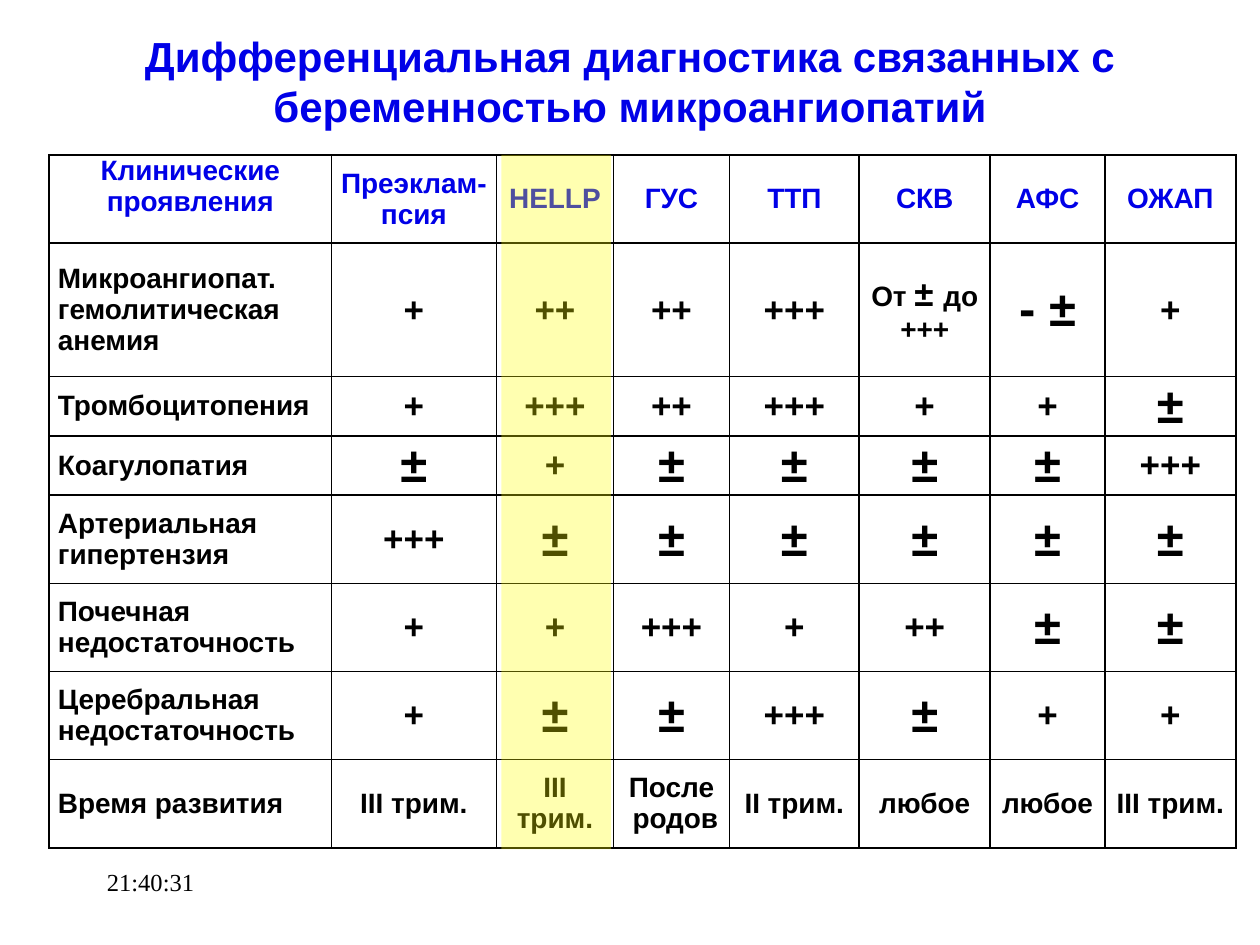
from lxml.etree import SubElement
from pptx import Presentation
from pptx.dml.color import RGBColor
from pptx.enum.shapes import MSO_SHAPE
from pptx.enum.text import MSO_ANCHOR, PP_ALIGN
from pptx.oxml.ns import qn
from pptx.util import Inches, Pt

BLUE = RGBColor(0x00, 0x00, 0xE7)
BLACK = RGBColor(0x00, 0x00, 0x00)
YELLOW = RGBColor(0xFF, 0xFF, 0x00)

TABLE_LEFT, TABLE_TOP = 0.39, 1.23
COLUMN_WIDTHS = [2.24, 1.31, 0.93, 0.92, 1.03, 1.04, 0.91, 1.04]
ROW_HEIGHTS = [0.7, 1.06, 0.47, 0.47, 0.7, 0.7, 0.7, 0.7]
ROWS = [
    ["Клинические проявления", "Преэклам-\nпсия", "HELLP", "ГУС", "ТТП", "СКВ", "АФС", "ОЖАП"],
    ["Микроангиопат.\nгемолитическая анемия", "+", "++", "++", "+++",
     [("От ", 16), ("± ", 20), ("до +++", 16)], "- ±", "+"],
    ["Тромбоцитопения", "+", "+++", "++", "+++", "+", "+", "±"],
    ["Коагулопатия", "±", "+", "±", "±", "±", "±", "+++"],
    ["Артериальная гипертензия", "+++", "±", "±", "±", "±", "±", "±"],
    ["Почечная недостаточность", "+", "+", "+++", "+", "++", "±", "±"],
    ["Церебральная недостаточность", "+", "±", "±", "+++", "±", "+", "+"],
    ["Время развития", "III трим.", "III трим.", "После\n родов", "II трим.",
     "любое", "любое", "III трим."],
]


def write_text(frame, text, size=16, color=BLACK, bold=True, font="Arial",
               align=PP_ALIGN.CENTER):
    """Fill a frame with text, or with (text, size) runs; a newline starts a paragraph."""
    lines = [[(line, size)] for line in text.split("\n")] if isinstance(text, str) else [text]
    for index, line in enumerate(lines):
        paragraph = frame.add_paragraph() if index else frame.paragraphs[0]
        paragraph.alignment = align
        for part, part_size in line:
            run = paragraph.add_run()
            run.text = part
            run.font.size = Pt(part_size)
            run.font.name = font
            run.font.bold = bold
            run.font.color.rgb = color


def add_text_box(slide, text, left, top, width, height, anchor=MSO_ANCHOR.TOP, **text_format):
    box = slide.shapes.add_textbox(Inches(left), Inches(top), Inches(width), Inches(height))
    box.text_frame.word_wrap = True
    box.text_frame.vertical_anchor = anchor
    write_text(box.text_frame, text, **text_format)


def sign_size(text):
    """Size of a cell's text: plus-minus signs largest, then pluses, then words."""
    if text in ("±", "- ±"):
        return 28
    return 20 if set(text) == {"+"} else 16


def set_borders(cell):
    properties = cell._tc.get_or_add_tcPr()
    for position, side in enumerate(("a:lnL", "a:lnR", "a:lnT", "a:lnB")):
        line = SubElement(properties, qn(side), w=str(Pt(1)))
        fill = SubElement(line, qn("a:solidFill"))
        SubElement(fill, qn("a:srgbClr"), val=str(BLACK))
        properties.insert(position, line)


def add_diagnosis_table(slide):
    table = slide.shapes.add_table(
        len(ROWS), len(COLUMN_WIDTHS), Inches(TABLE_LEFT), Inches(TABLE_TOP),
        Inches(sum(COLUMN_WIDTHS)), Inches(sum(ROW_HEIGHTS))).table
    table.first_row = table.horz_banding = False
    for column, width in zip(table.columns, COLUMN_WIDTHS):
        column.width = Inches(width)
    for row, height in zip(table.rows, ROW_HEIGHTS):
        row.height = Inches(height)
    for r, row_texts in enumerate(ROWS):
        for c, text in enumerate(row_texts):
            cell = table.cell(r, c)
            cell.margin_left = cell.margin_right = Inches(0.07)
            cell.margin_top = cell.margin_bottom = 0
            cell.vertical_anchor = MSO_ANCHOR.MIDDLE if r or c else MSO_ANCHOR.TOP
            cell.fill.background()
            set_borders(cell)
            write_text(cell.text_frame, text, size=sign_size(text) if isinstance(text, str) else 16,
                       color=BLACK if r else BLUE,
                       align=PP_ALIGN.LEFT if r and c == 0 else PP_ALIGN.CENTER)


def add_column_highlight(slide):
    highlight = slide.shapes.add_shape(
        MSO_SHAPE.RECTANGLE, Inches(3.98), Inches(TABLE_TOP), Inches(0.87), Inches(5.51))
    highlight.shadow.inherit = False
    highlight.line.fill.background()
    highlight.fill.solid()
    highlight.fill.fore_color.rgb = YELLOW
    color = highlight.fill._xPr.find(qn("a:solidFill")).find(qn("a:srgbClr"))
    SubElement(color, qn("a:alpha"), val="31000")


def main():
    presentation = Presentation()
    presentation.slide_width, presentation.slide_height = Inches(10), Inches(7.5)
    slide = presentation.slides.add_slide(presentation.slide_layouts[6])
    add_text_box(slide, "Дифференциальная диагностика связанных с беременностью микроангиопатий",
                 0.75, 0.24, 8.5, 0.8, anchor=MSO_ANCHOR.MIDDLE, size=24, color=BLUE)
    add_text_box(slide, "21:40:31", 0.75, 6.83, 2.08, 0.5, size=14, bold=False,
                 font="Times New Roman", align=PP_ALIGN.LEFT)
    add_diagnosis_table(slide)
    add_column_highlight(slide)
    presentation.save("out.pptx")


if __name__ == "__main__":
    main()
